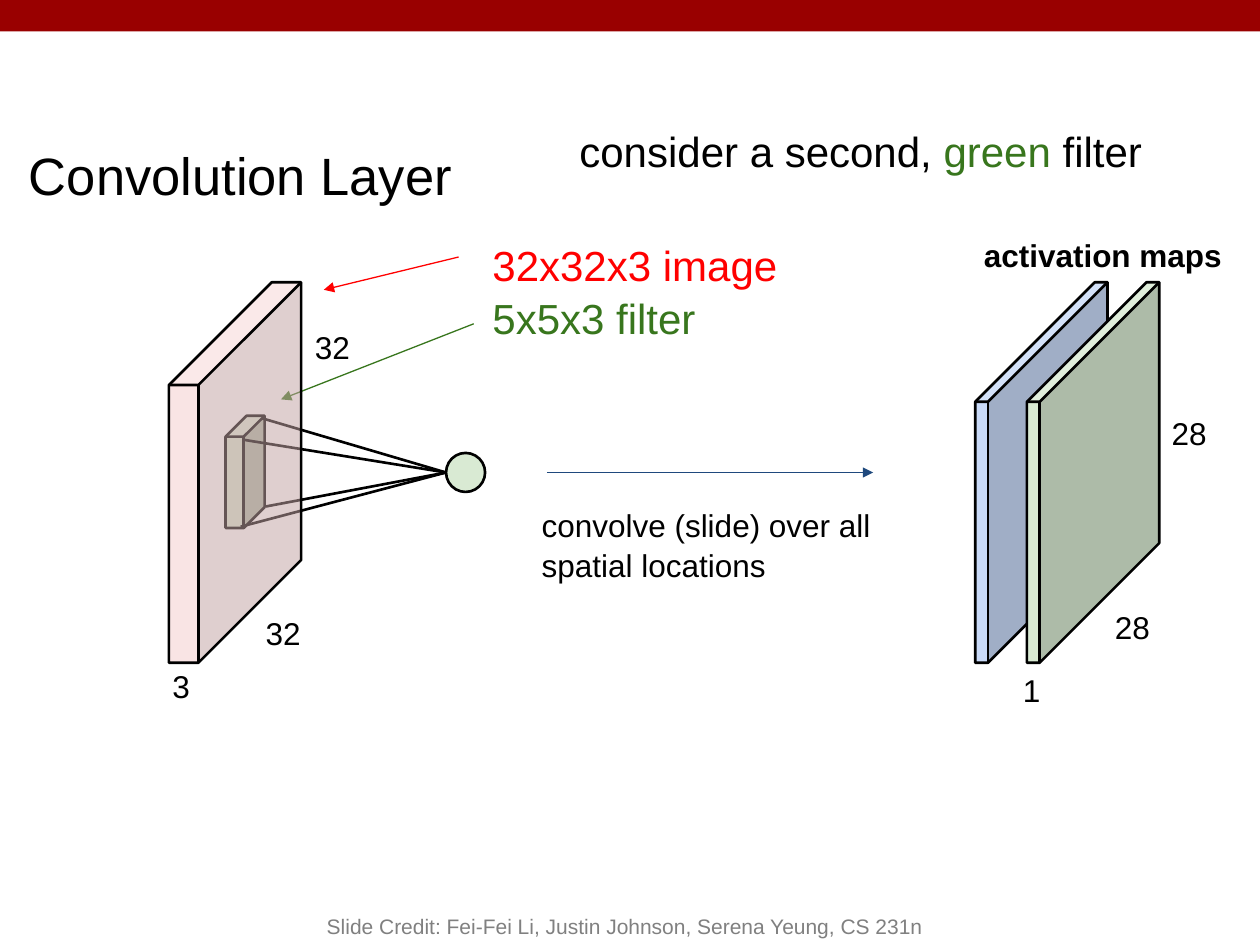
from lxml import etree
from pptx import Presentation
from pptx import util as u
from pptx.dml.color import RGBColor
from pptx.enum import shapes, text
from pptx.oxml.ns import qn

COLORS = {
    "bar": "990000", "black": "000000", "gray": "808080", "red": "FF0000",
    "green": "38761D", "navy": "1F497D", "pale_blue": "C9DAF8",
    "pale_green": "D9EAD3", "pale_red": "F4CCCC",
}
FONT = "Arial"

TITLE = ("Convolution Layer", (0.13, 1.01, 8.42, 0.69))
DIMENSIONS = [
    ("32", (2.01, 4.76, 0.54, 0.34)),
    ("32", (2.4, 2.49, 0.54, 0.31)),
    ("3", (1.27, 5.18, 0.54, 0.2)),
    ("1", (8.02, 5.21, 0.36, 0.34)),
    ("28", (8.75, 4.71, 0.54, 0.34)),
    ("28", (9.2, 3.17, 0.54, 0.34)),
]
INPUTS = [[("32x32x3 image", "red")], [("5x5x3 filter", "green")]]
HEADLINE = [[("consider a second, ", "black"), ("green ", "green"), ("filter", "black")]]
CREDIT = "Slide Credit: Fei-Fei Li, Justin Johnson, Serena Yeung, CS 231n"

VOLUME_TOP, VOLUME_WIDTH, VOLUME_HEIGHT = 2.24, 1.05, 3.02
NEURON_LEFT, NEURON_SIZE, AXIS = 3.54, 0.31, 3.75
FILTER_CORNERS = [(1.91, 4.18), (1.93, 3.49), (2.08, 3.32), (2.11, 4.02)]
ARROWS = [
    ((3.64, 2.04), (2.57, 2.3), "red"),
    ((3.76, 2.57), (2.23, 3.17), "green"),
    ((4.34, AXIS), (6.93, AXIS), "navy"),
]


def rgb(name):
    return RGBColor.from_string(COLORS[name])


def inches(values):
    return [u.Inches(value) for value in values]


def write(shape, content, size=18, color="black", bold=False, inset=0.1,
          align=text.PP_ALIGN.LEFT, anchor=text.MSO_ANCHOR.TOP, spacing=1.05):
    frame = shape.text_frame
    frame.word_wrap = True
    frame.auto_size = text.MSO_AUTO_SIZE.NONE
    frame.vertical_anchor = anchor
    frame.margin_left = frame.margin_right = u.Inches(inset)
    frame.margin_top = frame.margin_bottom = u.Inches(inset)
    lines = [[(content, color)]] if isinstance(content, str) else content
    for index, line in enumerate(lines):
        paragraph = frame.add_paragraph() if index else frame.paragraphs[0]
        paragraph.alignment = align
        paragraph.line_spacing = spacing
        for words, run_color in line:
            run = paragraph.add_run()
            run.text = words
            run.font.name = FONT
            run.font.size = u.Pt(size)
            run.font.bold = bold
            run.font.color.rgb = rgb(run_color)


def add_text(slide, content, box, **style):
    write(slide.shapes.add_textbox(*inches(box)), content, **style)


def add_solid(slide, kind, box, fill, depth=None, alpha=None, outlined=True):
    shape = slide.shapes.add_shape(kind, *inches(box))
    shape.shadow.inherit = False
    shape.fill.solid()
    shape.fill.fore_color.rgb = rgb(fill)
    if depth is not None:
        shape.adjustments[0] = depth
    if alpha is not None:
        color = shape.fill._xPr.find(qn("a:solidFill"))[0]
        etree.SubElement(color, qn("a:alpha"), val=str(alpha * 1000))
    if outlined:
        shape.line.color.rgb = rgb("black")
        shape.line.width = u.Pt(1.5)
    else:
        shape.line.fill.background()


def add_volume(slide, left, fill, depth, alpha=None):
    box = (left, VOLUME_TOP, VOLUME_WIDTH, VOLUME_HEIGHT)
    add_solid(slide, shapes.MSO_SHAPE.CUBE, box, fill, depth, alpha)


def add_line(slide, start, end, color="black", width=1.5, arrow=False):
    connector = slide.shapes.add_connector(
        shapes.MSO_CONNECTOR.STRAIGHT, *inches(start + end))
    connector.line.color.rgb = rgb(color)
    connector.line.width = u.Pt(width)
    if arrow:
        etree.SubElement(connector.line._get_or_add_ln(), qn("a:tailEnd"), type="triangle")
    etree.SubElement(connector._element.spPr, qn("a:effectLst"))


def main():
    presentation = Presentation()
    presentation.slide_width, presentation.slide_height = inches((10, 7.5))
    slide = presentation.slides.add_slide(presentation.slide_layouts[5])

    words, box = TITLE
    title = slide.shapes.title
    title.left, title.top, title.width, title.height = inches(box)
    write(title, words, size=30)

    add_solid(slide, shapes.MSO_SHAPE.RECTANGLE, (0, 0, 10, 0.25), "bar", outlined=False)
    add_volume(slide, 7.74, "pale_blue", 0.904)
    add_solid(slide, shapes.MSO_SHAPE.CUBE, (1.79, 3.3, 0.31, 0.89), "pale_green", 0.534)
    neuron = (NEURON_LEFT, AXIS - NEURON_SIZE / 2, NEURON_SIZE, NEURON_SIZE)
    add_solid(slide, shapes.MSO_SHAPE.OVAL, neuron, "pale_green")
    for corner in FILTER_CORNERS:
        add_line(slide, corner, (NEURON_LEFT, AXIS))
    for start, end, color in ARROWS:
        add_line(slide, start, end, color, 0.75, arrow=True)
    add_volume(slide, 8.15, "pale_green", 0.904)
    add_volume(slide, 1.34, "pale_red", 0.777, alpha=52)

    for label, box in DIMENSIONS:
        add_text(slide, label, box)
    add_text(slide, INPUTS, (3.81, 1.78, 3.98, 0.6), size=24)
    add_text(slide, "convolve (slide) over all spatial locations", (4.2, 3.9, 3.4, 0.89))
    add_text(slide, "activation maps", (7.71, 1.76, 2.26, 0.59), bold=True)
    add_text(slide, HEADLINE, (4.5, 0.88, 5.54, 0.31), size=24)
    add_text(slide, CREDIT, (2, 7, 5.92, 0.5), size=12, color="gray", inset=0.05,
             align=text.PP_ALIGN.CENTER, anchor=text.MSO_ANCHOR.BOTTOM, spacing=1.0)
    presentation.save("out.pptx")


if __name__ == "__main__":
    main()
